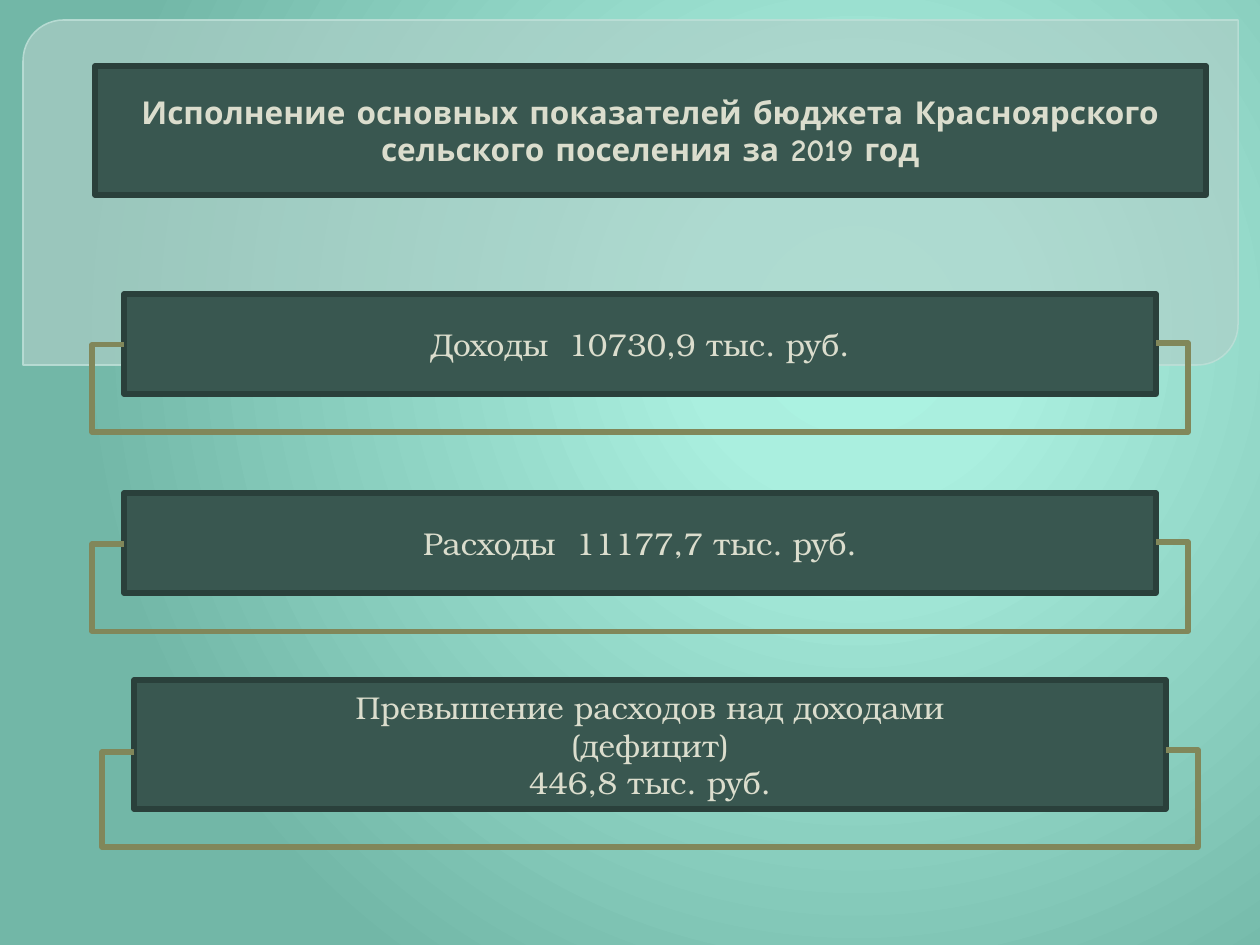
import pptx
import pptx.dml.color
import pptx.enum.shapes
import pptx.enum.text
import pptx.oxml
import pptx.oxml.ns
import pptx.util

PX = 914400 / 126
DARK, EDGE, CREAM, OLIVE = "395750", "2A403B", "DBDDCD", "81875A"
SERIF, COMIC = "TeX Gyre Bonum", "Comic Neue"
SHAPES = pptx.enum.shapes.MSO_SHAPE
INDICATORS = [
    ((124, 294, 1032, 100), "Доходы  10730,9 тыс. руб.", 51, 88),
    ((124, 493, 1032, 100), "Расходы  11177,7 тыс. руб.", 51, 88),
    ((134, 680, 1032, 129),
     "Превышение расходов над доходами\n(дефицит)\n446,8 тыс. руб.", 72, 96),
]


def px(*lengths):
    """Turn pixel lengths into EMU."""
    return [pptx.util.Emu(round(length * PX)) for length in lengths]


def rgb(value):
    """Make a colour from a hex string."""
    return pptx.dml.color.RGBColor.from_string(value)


def add_child(parent, tag, **attributes):
    """Append a DrawingML element to a parent."""
    child = pptx.oxml.xmlchemy.OxmlElement(tag)
    for key, value in attributes.items():
        child.set(key, str(value))
    parent.append(child)
    return child


def paint(shape, fill, line, width):
    """Give a shape a solid fill and an outline."""
    shape.fill.solid()
    shape.fill.fore_color.rgb = rgb(fill)
    shape.line.color.rgb = rgb(line)
    shape.line.width = pptx.util.Pt(width)


def set_background(slide):
    """Fill the slide with a circular gradient."""
    slide.background.fill.gradient()
    old = slide.element.find(".//" + pptx.oxml.ns.qn("a:gradFill"))
    stops = [(0, "ACF4E3"), (20, "AAEFDF"), (100, "72B7A7")]
    gradient = pptx.oxml.xmlchemy.OxmlElement("a:gradFill")
    stop_list = add_child(gradient, "a:gsLst")
    for percent, colour in stops:
        stop = add_child(stop_list, "a:gs", pos=percent * 1000)
        add_child(stop, "a:srgbClr", val=colour)
    circle = add_child(gradient, "a:path", path="circle")
    add_child(circle, "a:fillToRect", l=68000, t=35000, r=32000, b=65000)
    old.getparent().replace(old, gradient)


def add_panel(slide, box):
    """Place the translucent panel behind everything else."""
    panel = slide.shapes.add_shape(SHAPES.ROUND_2_DIAG_RECTANGLE, *px(*box))
    panel.shadow.inherit = False
    panel.adjustments[0], panel.adjustments[1] = 0.118, 0
    paint(panel, "B0CFC8", "BDDFD7", 0.87)
    colours = panel.element.spPr.iter(pptx.oxml.ns.qn("a:srgbClr"))
    for colour, opacity in zip(list(colours), (65, 88)):
        add_child(colour, "a:alpha", val=opacity * 1000)
    slide.shapes.element.insert(2, panel.element)


def fill_plate(plate, text, font, bold=False):
    """Style a dark plate and its centred text."""
    paint(plate, DARK, EDGE, 3)
    frame = plate.text_frame
    frame.text = text
    frame.word_wrap = True
    frame.auto_size = pptx.enum.text.MSO_AUTO_SIZE.NONE
    frame.vertical_anchor = pptx.enum.text.MSO_ANCHOR.MIDDLE
    for paragraph in frame.paragraphs:
        paragraph.alignment = pptx.enum.text.PP_ALIGN.CENTER
        for run in paragraph.runs:
            run.font.name = font
            run.font.size = pptx.util.Pt(18)
            run.font.bold = bold
            run.font.color.rgb = rgb(CREAM)


def add_heading(slide, box):
    """Turn the title placeholder into the heading plate."""
    heading = slide.shapes.title
    heading.left, heading.top, heading.width, heading.height = px(*box)
    fill_plate(heading, "Исполнение основных показателей бюджета Красноярского\n"
               "сельского поселения за 2019 год", COMIC, True)


def add_loop(slide, box, start, drop):
    """Run a bent connector from the left side under the plate to the right."""
    left, top, width, _ = box
    rise, overhang = 2, 32
    loop = slide.shapes.add_connector(
        pptx.enum.shapes.MSO_CONNECTOR.ELBOW,
        *px(left, top + start, left + width, top + start - rise))
    loop.line.color.rgb = rgb(OLIVE)
    loop.line.width = pptx.util.Pt(3)
    properties = loop.element.spPr
    add_child(properties, "a:effectLst")
    geometry = properties.find(pptx.oxml.ns.qn("a:prstGeom"))
    geometry.set("prst", "bentConnector5")
    guides = geometry.find(pptx.oxml.ns.qn("a:avLst"))
    ratios = (-overhang / width, -drop / rise, 1 + overhang / width)
    for number, ratio in enumerate(ratios, 1):
        add_child(guides, "a:gd", name=f"adj{number}",
                  fmla=f"val {round(ratio * 100000)}")


def add_indicator(slide, box, text, start, drop):
    """Place one budget indicator with its loop."""
    plate = slide.shapes.add_shape(SHAPES.RECTANGLE, *px(*box))
    plate.shadow.inherit = False
    fill_plate(plate, text, SERIF)
    add_loop(slide, box, start, drop)


def main():
    """Build and save the budget slide."""
    deck = pptx.Presentation()
    deck.slide_width, deck.slide_height = px(1260, 945)
    slide = deck.slides.add_slide(deck.slide_layouts[5])
    set_background(slide)
    add_panel(slide, (23, 20, 1215, 345))
    add_heading(slide, (95, 66, 1111, 129))
    for indicator in INDICATORS:
        add_indicator(slide, *indicator)
    deck.save("out.pptx")


if __name__ == "__main__":
    main()
